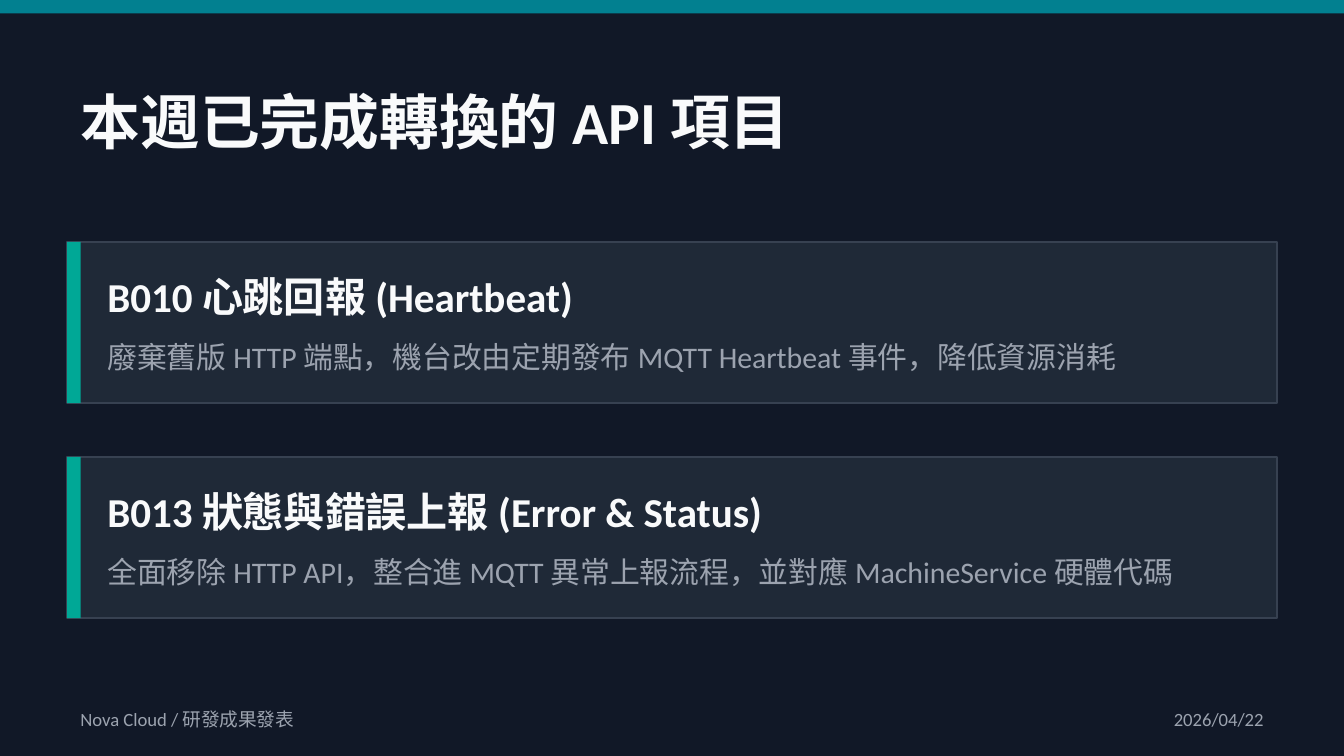
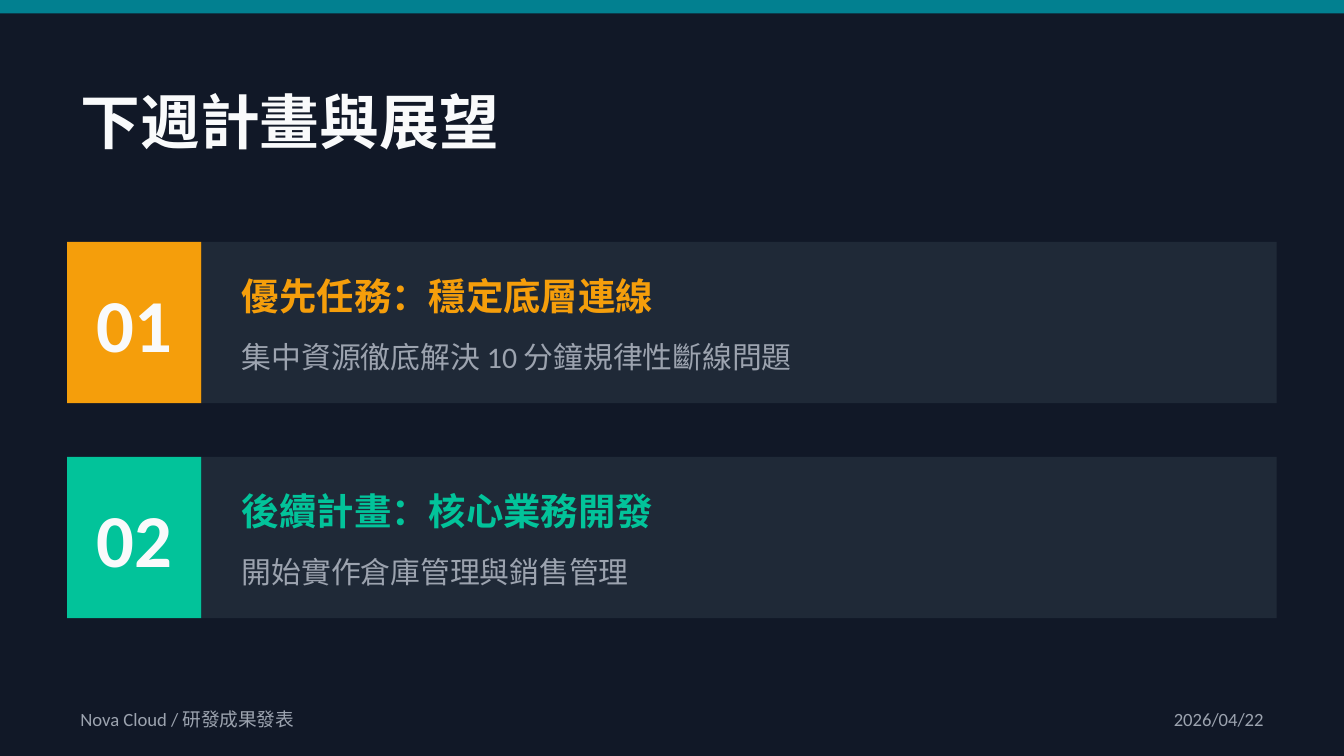
from lxml.etree import SubElement
from pptx import Presentation
from pptx.dml.color import RGBColor
from pptx.enum.shapes import MSO_SHAPE
from pptx.enum.text import MSO_ANCHOR, MSO_AUTO_SIZE, PP_ALIGN
from pptx.oxml.ns import qn
from pptx.util import Emu, Pt

PX = 4572  # 200 px to the inch
SLIDE_W, SLIDE_H = 2000, 1125
MARGIN = 100
CONTENT_W = SLIDE_W - 2 * MARGIN
CARD_TOP, CARD_H, CARD_STEP = 360, 240, 320
FONT = "Calibri"
COLORS = {
    "background": "111827",
    "band": "028090",
    "card": "1F2937",
    "border": "374151",
    "accent": "00A896",
    "light": "F9FAFB",
    "muted": "9CA3AF",
    "amber": "F59E0B",
    "mint": "02C39A",
}

COMPLETED_APIS = [
    ("B010 心跳回報 (Heartbeat)",
     "廢棄舊版 HTTP 端點，機台改由定期發布 MQTT Heartbeat 事件，降低資源消耗"),
    ("B013 狀態與錯誤上報 (Error & Status)",
     "全面移除 HTTP API，整合進 MQTT 異常上報流程，並對應 MachineService 硬體代碼"),
]
NEXT_PLANS = [
    ("amber", "優先任務：穩定底層連線", "集中資源徹底解決 10 分鐘規律性斷線問題"),
    ("mint", "後續計畫：核心業務開發", "開始實作倉庫管理與銷售管理"),
]


def color(name):
    return RGBColor.from_string(COLORS[name])


def emu(box):
    return [Emu(length * PX) for length in box]


def write(holder, text, size=16, ink="muted", bold=False,
          align=PP_ALIGN.LEFT, inset=True):
    frame = holder.text_frame
    frame.word_wrap = True
    frame.auto_size = MSO_AUTO_SIZE.NONE
    frame.vertical_anchor = MSO_ANCHOR.MIDDLE
    if not inset:
        frame.margin_left = frame.margin_right = 0
        frame.margin_top = frame.margin_bottom = 0
    paragraph = frame.paragraphs[0]
    paragraph.alignment = align
    run = paragraph.add_run()
    run.text = text
    run.font.size = Pt(size)
    run.font.bold = bold
    run.font.color.rgb = color(ink)
    run.font.name = FONT
    # East Asian glyphs name the same font
    SubElement(run._r.get_or_add_rPr(), qn("a:ea")).set("typeface", FONT)


def add_label(slide, box, text, **style):
    label = slide.shapes.add_textbox(*emu(box))
    write(label, text, **style)
    return label


def add_block(slide, box, fill, border=None):
    block = slide.shapes.add_shape(MSO_SHAPE.RECTANGLE, *emu(box))
    block.shadow.inherit = False
    block.fill.solid()
    block.fill.fore_color.rgb = color(fill)
    if border:
        block.line.color.rgb = color(border)
        block.line.width = Pt(1)
    else:
        block.line.fill.background()
    return block


def add_heading_and_detail(slide, box, heading, detail, size, ink):
    left, top, width = box
    add_label(slide, (left, top + 40, width, 80), heading,
              size=size, ink=ink, bold=True, inset=False)
    add_label(slide, (left, top + 140, width, 60), detail, inset=False)


def add_api_card(slide, box, heading, detail):
    left, top, _, height = box
    add_block(slide, box, "card", border="border")
    add_block(slide, (left, top, 20, height), "accent")
    add_heading_and_detail(slide, (left + 60, top, 1600), heading, detail, 22, "light")


def add_plan_card(slide, box, number, accent, heading, detail):
    left, top, width, height = box
    badge_w = 200
    badge = (left, top, badge_w, height)
    add_block(slide, badge, accent)
    add_label(slide, badge, f"{number:02d}", size=40, ink="light", bold=True,
              align=PP_ALIGN.CENTER, inset=False)
    add_block(slide, (left + badge_w, top, width - badge_w, height), "card")
    add_heading_and_detail(slide, (left + badge_w + 60, top, 1480),
                           heading, detail, 20, accent)


def card_box(index):
    return MARGIN, CARD_TOP + index * CARD_STEP, CONTENT_W, CARD_H


def add_titled_slide(prs, title):
    slide = prs.slides.add_slide(prs.slide_layouts[5])
    heading = slide.shapes.title
    heading.left, heading.top, heading.width, heading.height = emu(
        (MARGIN, 100, CONTENT_W, 160))
    write(heading, title, size=32, ink="light", bold=True)
    return slide


def move_frame_to_master(prs, slide):
    """Draw the top band and footers, then hand them to the slide master."""
    master = prs.slide_master
    master.background.fill.solid()
    master.background.fill.fore_color.rgb = color("background")
    shared = [
        add_block(slide, (0, 0, SLIDE_W, 20), "band"),
        add_label(slide, (MARGIN, 1040, 1000, 60), "Nova Cloud / 研發成果發表", size=10),
        add_label(slide, (1700, 1040, 200, 60), "2026/04/22", size=10,
                  align=PP_ALIGN.RIGHT),
    ]
    for part in shared:
        master.shapes.element.append(part.element)


def main():
    prs = Presentation()
    prs.slide_width, prs.slide_height = emu((SLIDE_W, SLIDE_H))

    # Completed API conversions
    completed = add_titled_slide(prs, "本週已完成轉換的 API 項目")
    move_frame_to_master(prs, completed)
    for index, (heading, detail) in enumerate(COMPLETED_APIS):
        add_api_card(completed, card_box(index), heading, detail)

    # Plans for next week
    plans = add_titled_slide(prs, "下週計畫與展望")
    for index, (accent, heading, detail) in enumerate(NEXT_PLANS):
        add_plan_card(plans, card_box(index), index + 1, accent, heading, detail)

    prs.save("out.pptx")


if __name__ == "__main__":
    main()
